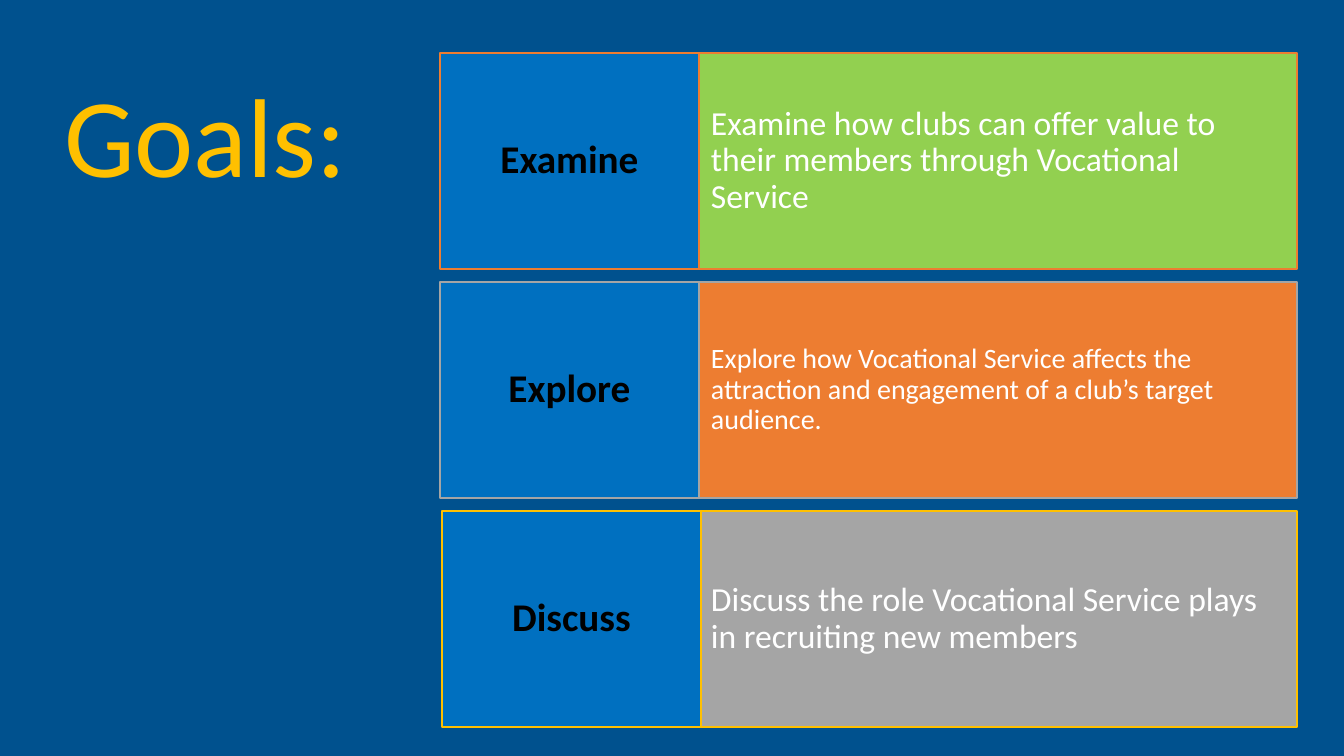
import pptx
import pptx.util
import pptx.dml.color
import pptx.enum.shapes
import pptx.enum.text

RGBColor = pptx.dml.color.RGBColor
Align = pptx.enum.text.PP_ALIGN

NAVY = RGBColor(0x00, 0x51, 0x8E)
BLUE = RGBColor(0x00, 0x70, 0xC0)
GREEN = RGBColor(0x92, 0xD0, 0x50)
ORANGE = RGBColor(0xED, 0x7D, 0x31)
GREY = RGBColor(0xA5, 0xA5, 0xA5)
GOLD = RGBColor(0xFF, 0xC0, 0x00)
WHITE = RGBColor(0xFF, 0xFF, 0xFF)
BLACK = RGBColor(0x00, 0x00, 0x00)

EMU_PER_PX = 914400 / 100.8


def px(length):
    return pptx.util.Emu(round(length * EMU_PER_PX))


class GoalsSlide:
    font_name = "Calibri"
    line_spacing = 0.9

    def __init__(self, presentation, background):
        self.slide = presentation.slides.add_slide(presentation.slide_layouts[6])
        fill = self.slide.background.fill
        fill.solid()
        fill.fore_color.rgb = background

    def add_text(self, shape, text, size, color, align, insets, bold=False):
        frame = shape.text_frame
        frame.word_wrap = True
        frame.vertical_anchor = pptx.enum.text.MSO_ANCHOR.MIDDLE
        frame.margin_left = frame.margin_right = px(insets[0])
        frame.margin_top = frame.margin_bottom = px(insets[1])
        paragraph = frame.paragraphs[0]
        paragraph.alignment = align
        paragraph.line_spacing = self.line_spacing
        run = paragraph.add_run()
        run.text = text
        run.font.name = self.font_name
        run.font.size = pptx.util.Pt(size)
        run.font.bold = bold
        run.font.color.rgb = color

    def title(self, box, text):
        shape = self.slide.shapes.add_textbox(*map(px, box))
        self.add_text(shape, text, 80, GOLD, Align.RIGHT, (10, 5))

    def panel(self, box, fill, line):
        shape = self.slide.shapes.add_shape(
            pptx.enum.shapes.MSO_SHAPE.RECTANGLE, *map(px, box))
        shape.shadow.inherit = False
        shape.fill.solid()
        shape.fill.fore_color.rgb = fill
        shape.line.color.rgb = line
        shape.line.width = pptx.util.Pt(1)
        return shape

    def goal(self, top, label_left, name, text, size, fill, line):
        # Description first, so that the label lies over its left edge
        description = self.panel((699, top, 598, 216), fill, line)
        self.add_text(description, text, size, WHITE, Align.LEFT, (12, 54))
        label = self.panel((label_left, top, 259, 216), BLUE, line)
        self.add_text(label, name, 28, BLACK, Align.CENTER, (8, 21), bold=True)


def main():
    presentation = pptx.Presentation()
    presentation.slide_width = px(1344)
    presentation.slide_height = px(756)
    slide = GoalsSlide(presentation, NAVY)

    # Heading
    slide.title((46, 44, 311, 194), "Goals:")

    # Goal rows: label left, name, description, text size, fill, line
    goals = [
        (440, "Examine", "Examine how clubs can offer value to their members "
         "through Vocational Service", 24, GREEN, ORANGE),
        (440, "Explore", "Explore how Vocational Service affects the attraction "
         "and engagement of a club’s target audience.", 20, ORANGE, GREY),
        (442, "Discuss", "Discuss the role Vocational Service plays in "
         "recruiting new members", 24, GREY, GOLD),
    ]
    for row, goal in enumerate(goals):
        slide.goal(53 + 229 * row, *goal)

    presentation.save("out.pptx")


if __name__ == "__main__":
    main()
